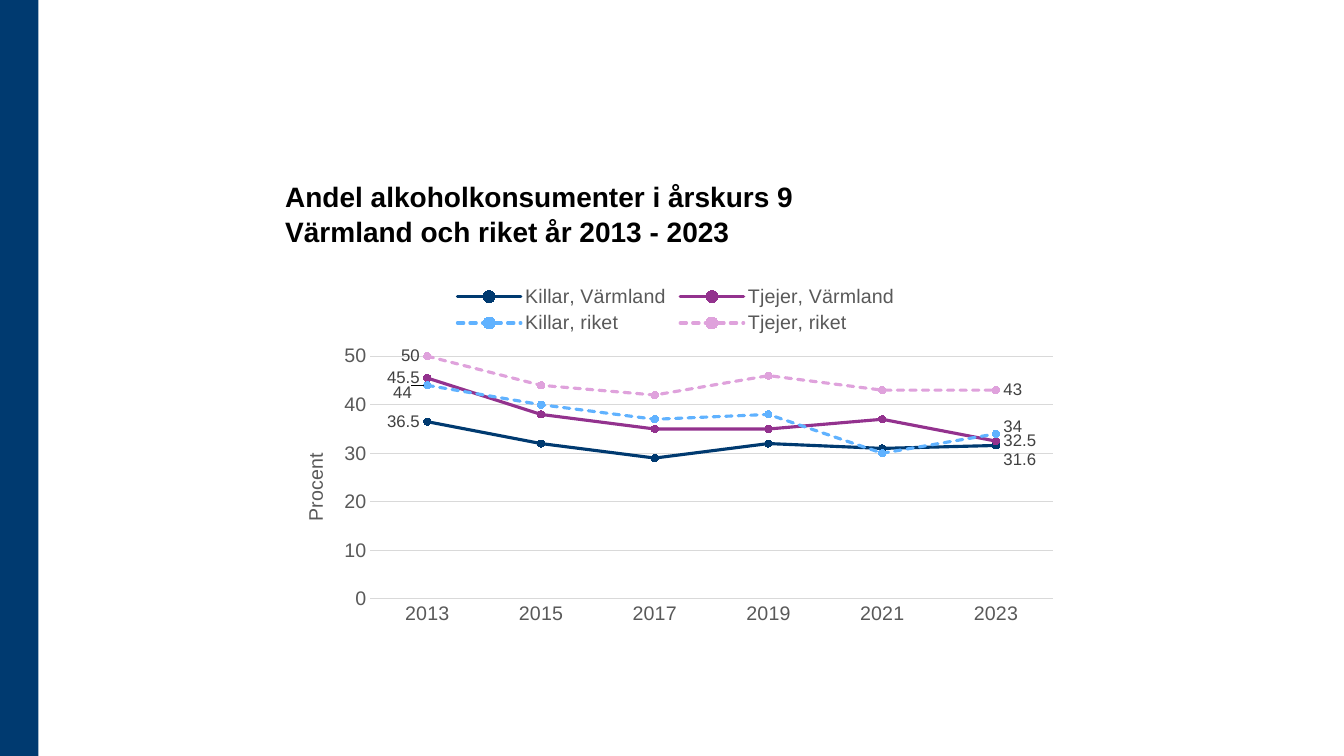
from pptx import Presentation
from pptx.chart.data import CategoryChartData
from pptx.dml.color import RGBColor
from pptx.enum.chart import XL_CHART_TYPE as ChartType, XL_LABEL_POSITION as LabelSide
from pptx.enum.chart import XL_LEGEND_POSITION as LegendSide, XL_MARKER_STYLE as Marker
from pptx.enum.chart import XL_TICK_MARK as Tick
from pptx.enum.dml import MSO_LINE
from pptx.enum.shapes import MSO_SHAPE
from pptx.enum.text import MSO_ANCHOR
from pptx.oxml import parse_xml
from pptx.oxml.ns import nsdecls, qn
from pptx.util import Inches, Pt

NAVY, GRID, GREY = "003A70", "D9D9D9", "595959"


def style(font, size, color, bold=False):
    values = {"name": "Arial", "size": Pt(size), "bold": bold}
    for key, value in values.items():
        setattr(font, key, value)
    font.color.rgb = RGBColor.from_string(color)


def place(parent, index, **values):
    for old in parent.findall(qn("c:layout")):
        parent.remove(old)
    parts = "".join(f'<c:{key} val="{value}"/>' for key, value in values.items())
    parent.insert(index, parse_xml(
        f'<c:layout {nsdecls("c")}><c:manualLayout>{parts}</c:manualLayout></c:layout>'))


prs = Presentation()
prs.slide_width, prs.slide_height = Inches(13.33), Inches(7.5)
slide = prs.slides.add_slide(prs.slide_layouts[6])

side_band = slide.shapes.add_shape(MSO_SHAPE.RECTANGLE, 0, 0, Inches(0.38), Inches(7.5))
side_band.shadow.inherit = False
side_band.fill.solid()
side_band.fill.fore_color.rgb = RGBColor.from_string(NAVY)
side_band.line.fill.background()

heading = slide.shapes.add_textbox(Inches(2.73), Inches(1.06), Inches(7.87), Inches(1.45)).text_frame
heading.word_wrap = True
heading.vertical_anchor = MSO_ANCHOR.BOTTOM
heading.text = "Andel alkoholkonsumenter i årskurs 9 \vVärmland och riket år 2013 - 2023"
heading.paragraphs[0].line_spacing = 1.05
for run in heading.paragraphs[0].runs:
    style(run.font, 20, "000000", True)

groups = [
    ("Killar, Värmland", NAVY, None, (36.5, 32, 29, 32, 31, 31.6), {5: (0, 0.04)}),
    ("Tjejer, Värmland", "93328E", None, (45.5, 38, 35, 35, 37, 32.5), {}),
    ("Killar, riket", "60B2FF", MSO_LINE.SQUARE_DOT, (44, 40, 37, 38, 30, 34),
     {0: (-0.01, 0.02), 5: (0, -0.02)}),
    ("Tjejer, riket", "DFA2DC", MSO_LINE.SQUARE_DOT, (50, 44, 42, 46, 43, 43), {}),
]
data = CategoryChartData()
data.categories = [str(year) for year in range(2013, 2024, 2)]
for name, color, dash, shares, shifts in groups:
    data.add_series(name, shares)

chart = slide.shapes.add_chart(
    ChartType.LINE_MARKERS, Inches(2.73), Inches(2.72), Inches(7.87), Inches(3.54), data).chart
chart.has_title = False
style(chart.font, 14, "000000")
chart.plots[0].vary_by_categories = False
plot_area = chart.plots[0]._element.getparent()
place(plot_area, 0, layoutTarget="inner", xMode="edge", yMode="edge", x=0.12, y=0.23, w=0.86, h=0.68)

chart.has_legend = True
legend = chart.legend
legend.position = LegendSide.TOP
legend.include_in_layout = False
style(legend.font, 14, GREY)
place(legend._element, 1, xMode="edge", yMode="edge", x=0.22, y=0.02, w=0.57, h=0.16)

years, percent = chart.category_axis, chart.value_axis
for axis in (years, percent):
    axis.major_tick_mark = axis.minor_tick_mark = Tick.NONE
    style(axis.tick_labels.font, 14, GREY)
percent.minimum_scale, percent.maximum_scale, percent.major_unit = 0, 50, 10
percent.has_major_gridlines = True
percent.format.line.fill.background()
for line in (years.format.line, percent.major_gridlines.format.line):
    line.color.rgb = RGBColor.from_string(GRID)
    line.width = Pt(0.75)

percent_title = percent.axis_title
percent_title.text_frame.text = "Procent"
style(percent_title.text_frame.paragraphs[0].runs[0].font, 14, GREY)
for body in percent_title._element.iter(qn("a:bodyPr")):
    body.set("rot", "-5400000")
    body.set("vert", "horz")
place(percent_title._element, 1, xMode="edge", yMode="edge", x=0.03, y=0.49)

for series, (name, color, dash, shares, shifts) in zip(chart.plots[0].series, groups):
    rgb = RGBColor.from_string(color)
    series.smooth = False
    series.format.line.color.rgb = rgb
    series.format.line.width = Pt(2.25)
    if dash:
        series.format.line.dash_style = dash
    for outline in series._element.iter(qn("a:ln")):
        outline.set("cap", "rnd")
    marker = series.marker
    marker.style, marker.size = Marker.CIRCLE, 5
    marker.format.fill.solid()
    marker.format.fill.fore_color.rgb = rgb
    marker.format.line.color.rgb = rgb

    labels = series.data_labels
    labels.show_value = True
    labels.position = LabelSide.LEFT
    style(labels.font, 12, "404040")
    for point in range(1, 5):
        labels._element.insert(point - 1, parse_xml(
            f'<c:dLbl {nsdecls("c")}><c:idx val="{point}"/><c:delete val="1"/></c:dLbl>'))
    for point, side in ((0, LabelSide.LEFT), (5, LabelSide.RIGHT)):
        label = series.points[point].data_label
        style(label.font, 12, "404040")
        label.position = side
    for entry in labels._element.findall(qn("c:dLbl")):
        shift = shifts.get(int(entry.find(qn("c:idx")).get("val")))
        if shift:
            place(entry, 1, x=shift[0], y=shift[1])

prs.save("out.pptx")
